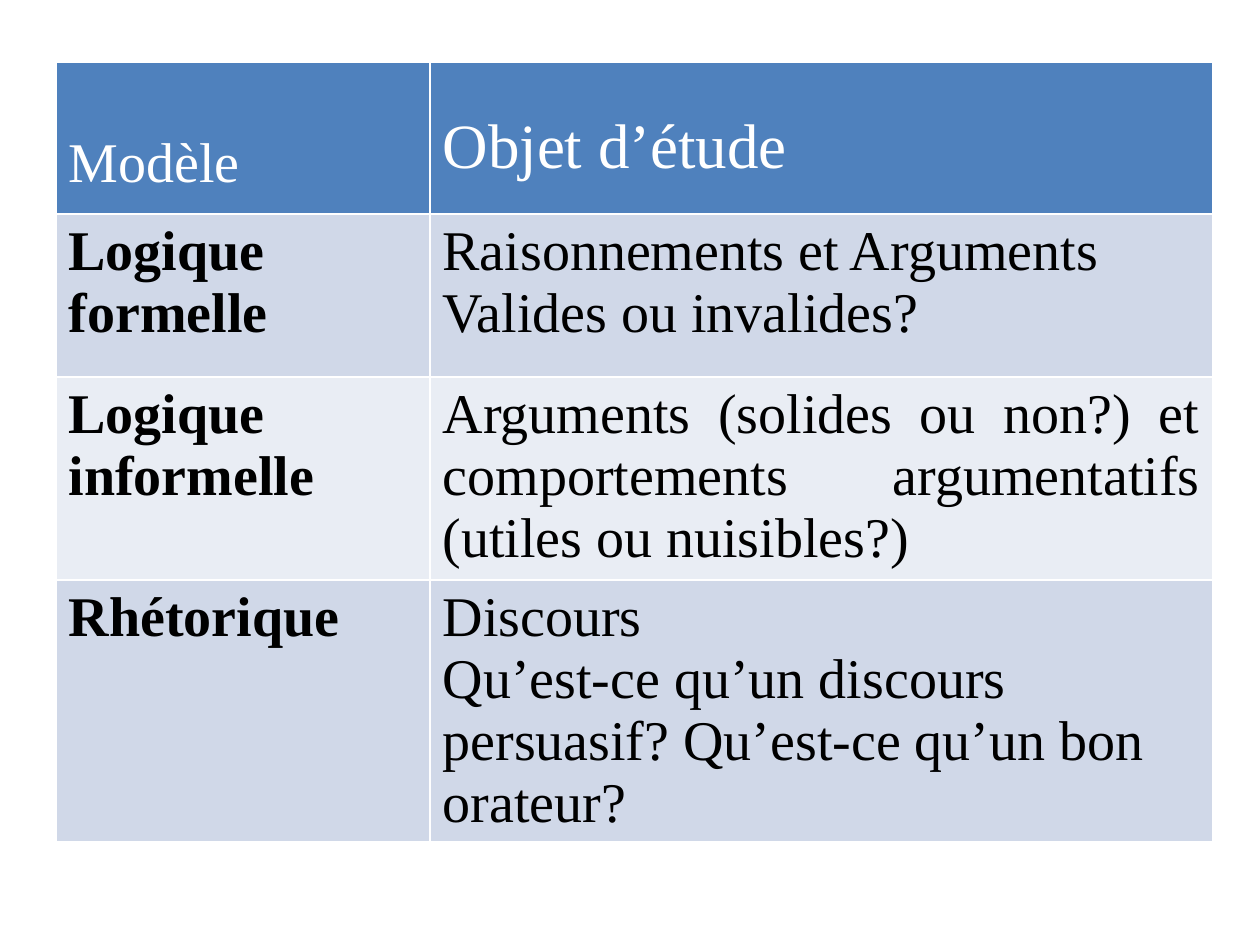
from dataclasses import dataclass

from lxml import etree
from pptx import Presentation
from pptx import util as u
from pptx.dml.color import RGBColor
from pptx.enum import text
from pptx.oxml.ns import qn


@dataclass(frozen=True)
class Theme:
    """Colours, font and type sizes of the slide."""
    font: str = "Times New Roman"
    head: str = "4F81BD"
    bands: tuple = ("D0D8E8", "E9EDF4")
    light: str = "FFFFFF"
    dark: str = "000000"
    body: int = 32
    title: int = 36
    rule: int = 1


T = Theme()
LEFT, JUSTIFY = text.PP_ALIGN.LEFT, text.PP_ALIGN.JUSTIFY
HEADERS = [("Modèle", T.body, 70), ("Objet d’étude", T.title, 50)]
MODELS = [
    ("Logique formelle", ["Raisonnements et Arguments ", "Valides ou invalides? "], JUSTIFY),
    ("Logique informelle",
     ["Arguments (solides ou non?) et comportements argumentatifs (utiles ou nuisibles?) "], JUSTIFY),
    ("Rhétorique",
     ["Discours", "Qu’est-ce qu’un discours persuasif? Qu’est-ce qu’un bon orateur?"], LEFT),
]
COLS = [374, 783]
ROWS = [152, 163, 203, 260]


def px(n):
    """Turn pixels into EMU."""
    return u.Emu(round(n * 914400 / 126))


def write(tf, lines, size=T.body, color=T.dark, bold=False, align=LEFT):
    """Write one paragraph per line in one format."""
    for i, line in enumerate(lines):
        p = tf.add_paragraph() if i else tf.paragraphs[0]
        p.alignment = align
        r = p.add_run()
        r.text = line
        r.font.name, r.font.size, r.font.bold = T.font, u.Pt(size), bold
        r.font.color.rgb = RGBColor.from_string(color)


def style_cell(cell, fill):
    """Give a cell its borders and fill."""
    pr = cell._tc.get_or_add_tcPr()
    for side in ("a:lnL", "a:lnR", "a:lnT", "a:lnB"):
        ln = etree.SubElement(pr, qn(side), w=str(u.Pt(T.rule)))
        solid = etree.SubElement(ln, qn("a:solidFill"))
        etree.SubElement(solid, qn("a:srgbClr"), val=T.light)
    cell.fill.solid()
    cell.fill.fore_color.rgb = RGBColor.from_string(fill)


def model_table(s, left, top, cols, rows):
    """Place the table of models and what each one studies."""
    frame = s.shapes.add_table(len(rows), len(cols), px(left), px(top),
                               px(sum(cols)), px(sum(rows)))
    table = frame.table
    for col, width in zip(table.columns, cols):
        col.width = px(width)
    for i, (row, height) in enumerate(zip(table.rows, rows)):
        row.height = px(height)
        for cell in row.cells:
            style_cell(cell, T.bands[(i - 1) % 2] if i else T.head)
    for j, (label, size, inset) in enumerate(HEADERS):
        cell = table.cell(0, j)
        cell.margin_top = px(inset)
        write(cell.text_frame, [label], size=size, color=T.light)
    for i, (model, study, align) in enumerate(MODELS, 1):
        write(table.cell(i, 0).text_frame, [model], bold=True)
        write(table.cell(i, 1).text_frame, study, align=align)


def main():
    """Build and save the slide."""
    prs = Presentation()
    prs.slide_width, prs.slide_height = px(1260), px(945)
    s = prs.slides.add_slide(prs.slide_layouts[6])
    model_table(s, 56, 62, COLS, ROWS)
    prs.save("out.pptx")


if __name__ == "__main__":
    main()
